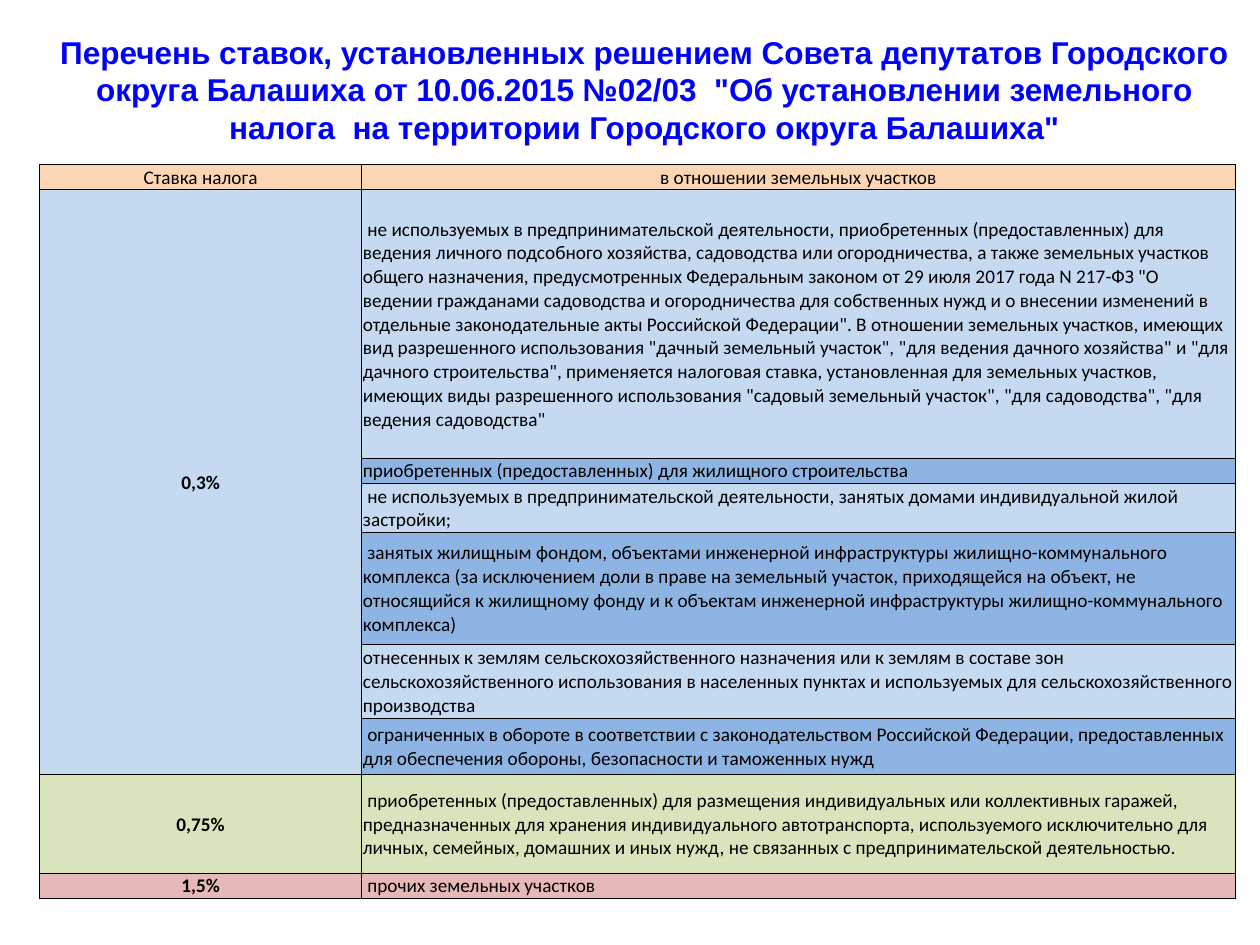
from lxml import etree
from pptx import Presentation
from pptx import util as u
from pptx.dml.color import RGBColor
from pptx.enum import text
from pptx.oxml import ns

Pt = u.Pt

BLACK = RGBColor(0x00, 0x00, 0x00)
TITLE_BLUE = RGBColor(0x00, 0x00, 0xFF)
PEACH = RGBColor(0xFC, 0xD5, 0xB4)
LIGHT_BLUE = RGBColor(0xC5, 0xD9, 0xF1)
MID_BLUE = RGBColor(0x8D, 0xB4, 0xE2)
GREEN = RGBColor(0xD8, 0xE4, 0xBC)
PINK = RGBColor(0xE6, 0xB8, 0xB7)

TITLE = (
    'Перечень ставок, установленных решением Совета депутатов Городского '
    'округа Балашиха от 10.06.2015 №02/03  "Об установлении земельного '
    'налога  на территории Городского округа Балашиха"'
)
HEADERS = ("Ставка налога", "в отношении земельных участков")
COL_WIDTHS = (184.3, 499)
HEADER_HEIGHT = 14.4

# Each group: rate, rate fill, then (row height, fill, plots of land)
RATE_GROUPS = [
    ("0,3%", LIGHT_BLUE, [
        (153.4, LIGHT_BLUE,
         ' не используемых в предпринимательской деятельности, приобретенных '
         '(предоставленных) для ведения личного подсобного хозяйства, садоводства '
         'или огородничества, а также земельных участков общего назначения, '
         'предусмотренных Федеральным законом от 29 июля 2017 года N 217-ФЗ '
         '"О ведении гражданами садоводства и огородничества для собственных нужд '
         'и о внесении изменений в отдельные законодательные акты Российской '
         'Федерации". В отношении земельных участков, имеющих вид разрешенного '
         'использования "дачный земельный участок", "для ведения дачного хозяйства" '
         'и "для дачного строительства", применяется налоговая ставка, установленная '
         'для земельных участков, имеющих виды разрешенного использования "садовый '
         'земельный участок", "для садоводства", "для ведения садоводства"'),
        (14.4, MID_BLUE,
         'приобретенных (предоставленных) для жилищного строительства'),
        (28.1, LIGHT_BLUE,
         ' не используемых в предпринимательской деятельности, занятых домами '
         'индивидуальной жилой застройки;'),
        (63.8, MID_BLUE,
         ' занятых жилищным фондом, объектами инженерной инфраструктуры '
         'жилищно-коммунального комплекса (за исключением доли в праве на земельный '
         'участок, приходящейся на объект, не относящийся к жилищному фонду и к '
         'объектам инженерной инфраструктуры жилищно-коммунального комплекса)'),
        (42.5, LIGHT_BLUE,
         'отнесенных к землям сельскохозяйственного назначения или к землям в составе '
         'зон сельскохозяйственного использования в населенных пунктах и используемых '
         'для сельскохозяйственного производства'),
        (32.2, MID_BLUE,
         ' ограниченных в обороте в соответствии с законодательством Российской '
         'Федерации, предоставленных для обеспечения обороны, безопасности и '
         'таможенных нужд'),
    ]),
    ("0,75%", GREEN, [
        (56.2, GREEN,
         ' приобретенных (предоставленных) для размещения индивидуальных или '
         'коллективных гаражей, предназначенных для хранения индивидуального '
         'автотранспорта, используемого исключительно для личных, семейных, домашних '
         'и иных нужд, не связанных с предпринимательской деятельностью.'),
    ]),
    ("1,5%", PINK, [(14.4, PINK, " прочих земельных участков")]),
]


def format_paragraph(p, font, size, color, bold, align):
    p.alignment = align
    for r in p.runs:
        r.font.name = font
        r.font.size = Pt(size)
        r.font.bold = bold
        r.font.color.rgb = color


def add_title(s):
    sp = s.shapes.add_textbox(Pt(22.3), Pt(15.1), Pt(692), Pt(72.7))
    tf = sp.text_frame
    tf.word_wrap = True
    tf.text = TITLE
    format_paragraph(tf.paragraphs[0], "Arial", 18, TITLE_BLUE, True,
                     text.PP_ALIGN.CENTER)


def style_cell(cell, fill):
    """Thin black border on all sides, solid fill, tight margins."""
    tc_pr = cell._tc.get_or_add_tcPr()
    for side in ("lnL", "lnR", "lnT", "lnB"):
        ln = etree.SubElement(tc_pr, ns.qn("a:" + side), w=str(Pt(0.5)))
        solid = etree.SubElement(ln, ns.qn("a:solidFill"))
        etree.SubElement(solid, ns.qn("a:srgbClr"), val=str(BLACK))
    cell.fill.solid()
    cell.fill.fore_color.rgb = fill
    cell.margin_left = cell.margin_right = cell.margin_top = Pt(0.6)
    cell.margin_bottom = 0


def write_cell(cell, content, bold=False, align=text.PP_ALIGN.CENTER,
               anchor=text.MSO_ANCHOR.MIDDLE):
    cell.text_frame.text = content
    cell.vertical_anchor = anchor
    format_paragraph(cell.text_frame.paragraphs[0], "Calibri", 11, BLACK,
                     bold, align)


def add_rate_table(s):
    heights = [HEADER_HEIGHT] + [h for _, _, plots in RATE_GROUPS
                                 for h, _, _ in plots]
    table = s.shapes.add_table(len(heights), len(COL_WIDTHS), Pt(22.5), Pt(94),
                               Pt(sum(COL_WIDTHS)), Pt(sum(heights))).table
    table.first_row = table.horz_banding = False
    for column, width in zip(table.columns, COL_WIDTHS):
        column.width = Pt(width)
    for row, height in zip(table.rows, heights):
        row.height = Pt(height)

    # Header row
    for col, header in enumerate(HEADERS):
        style_cell(table.cell(0, col), PEACH)
        write_cell(table.cell(0, col), header, anchor=text.MSO_ANCHOR.BOTTOM)

    # One merged rate cell per group, with its plots beside it
    row = 1
    for rate, rate_fill, plots in RATE_GROUPS:
        first = row
        for _, fill, plot in plots:
            style_cell(table.cell(row, 0), rate_fill)
            style_cell(table.cell(row, 1), fill)
            write_cell(table.cell(row, 1), plot, align=text.PP_ALIGN.LEFT)
            row += 1
        if len(plots) > 1:
            table.cell(first, 0).merge(table.cell(row - 1, 0))
        write_cell(table.cell(first, 0), rate, bold=True)


def main():
    prs = Presentation()
    prs.slide_width, prs.slide_height = Pt(720), Pt(540)
    s = prs.slides.add_slide(prs.slide_layouts[6])
    add_title(s)
    add_rate_table(s)
    prs.save("out.pptx")


if __name__ == "__main__":
    main()
